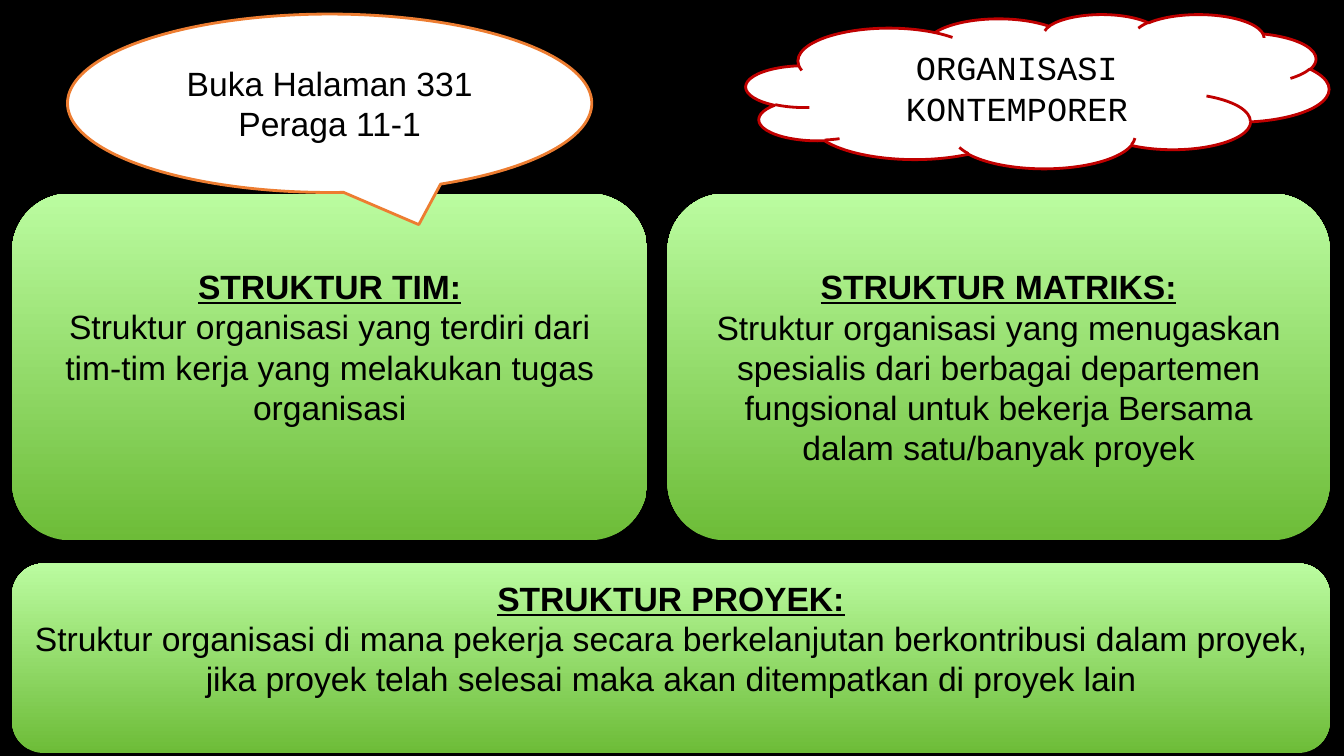
from dataclasses import dataclass

from pptx import Presentation
from pptx import util as u
from pptx.dml.color import RGBColor
from pptx.enum import shapes, text


@dataclass(frozen=True)
class Theme:
    background: str = "000000"
    ink: str = "000000"
    paper: str = "FFFFFF"
    orange: str = "ED7D31"
    red: str = "C00000"
    green_bottom: str = "6DBC38"
    green_top: str = "BBFCA0"
    body_font: str = "Arial"
    title_font: str = "Courier New"
    text_size: int = 24
    line_width: int = 2


def color(value):
    return RGBColor.from_string(value)


def apply_format(target, values):
    for name, value in values.items():
        setattr(target, name, value)


class SlideBuilder:
    def __init__(self, page, theme):
        self.page = page
        self.theme = theme
        fill = page.background.fill
        fill.solid()
        fill.fore_color.rgb = color(theme.background)

    def shape(self, kind, left, top, width, height):
        box = self.page.shapes.add_shape(
            kind, *(u.Inches(length) for length in (left, top, width, height)))
        box.shadow.inherit = False
        apply_format(box.text_frame, {
            "word_wrap": True, "vertical_anchor": text.MSO_ANCHOR.MIDDLE})
        return box

    def add_wording(self, para, wording, font, **emphasis):
        para.alignment = text.PP_ALIGN.CENTER
        span = para.add_run()
        span.text = wording
        apply_format(span.font, {
            "name": font, "size": u.Pt(self.theme.text_size), **emphasis})
        span.font.color.rgb = color(self.theme.ink)

    def bubble(self, kind, bounds, outline, wording, font):
        box = self.shape(kind, *bounds)
        box.fill.solid()
        box.fill.fore_color.rgb = color(self.theme.paper)
        box.line.color.rgb = color(outline)
        box.line.width = u.Pt(self.theme.line_width)
        self.add_wording(box.text_frame.paragraphs[0], wording, font)
        return box

    def panel(self, bounds, heading, body, bottom_inset=0.05):
        """Green card; a larger bottom inset lifts the centred text."""
        box = self.shape(shapes.MSO_SHAPE.ROUNDED_RECTANGLE, *bounds)
        box.line.fill.background()
        box.fill.gradient()
        box.fill.gradient_angle = 90
        shades = (self.theme.green_bottom, self.theme.green_top)
        for stop, shade in zip(box.fill.gradient_stops, shades):
            stop.color.rgb = color(shade)
        frame = box.text_frame
        frame.margin_bottom = u.Inches(bottom_inset)
        self.add_wording(frame.paragraphs[0], heading, self.theme.body_font,
                         bold=True, underline=True)
        self.add_wording(frame.add_paragraph(), body, self.theme.body_font)


def main():
    deck = Presentation()
    deck.slide_width, deck.slide_height = u.Inches(13.33), u.Inches(7.5)
    theme = Theme()
    builder = SlideBuilder(deck.slides.add_slide(deck.slide_layouts[6]), theme)
    lifted = 0.45

    builder.bubble(shapes.MSO_SHAPE.CLOUD, (7.4, 0.14, 5.78, 1.53), theme.red,
                   "ORGANISASI KONTEMPORER", theme.title_font)
    builder.panel(
        (0.12, 1.92, 6.3, 3.44), "STRUKTUR TIM:",
        "Struktur organisasi yang terdiri dari tim-tim kerja yang melakukan "
        "tugas organisasi", lifted)
    builder.panel(
        (0.12, 5.59, 13.07, 1.88), "STRUKTUR PROYEK:",
        "Struktur organisasi di mana pekerja secara berkelanjutan "
        "berkontribusi dalam proyek, jika proyek telah selesai maka akan "
        "ditempatkan di proyek lain", lifted)
    callout = builder.bubble(
        shapes.MSO_SHAPE.OVAL_CALLOUT, (0.67, 0.14, 5.2, 1.77), theme.orange,
        "Buka Halaman 331 Peraga 11-1", theme.body_font)
    for index, offset in enumerate((0.17, 0.68)):
        callout.adjustments[index] = offset
    builder.panel(
        (6.62, 1.92, 6.57, 3.44), "STRUKTUR MATRIKS:",
        "Struktur organisasi yang menugaskan spesialis dari berbagai "
        "departemen fungsional untuk bekerja Bersama dalam satu/banyak proyek")

    deck.save("out.pptx")


if __name__ == "__main__":
    main()
